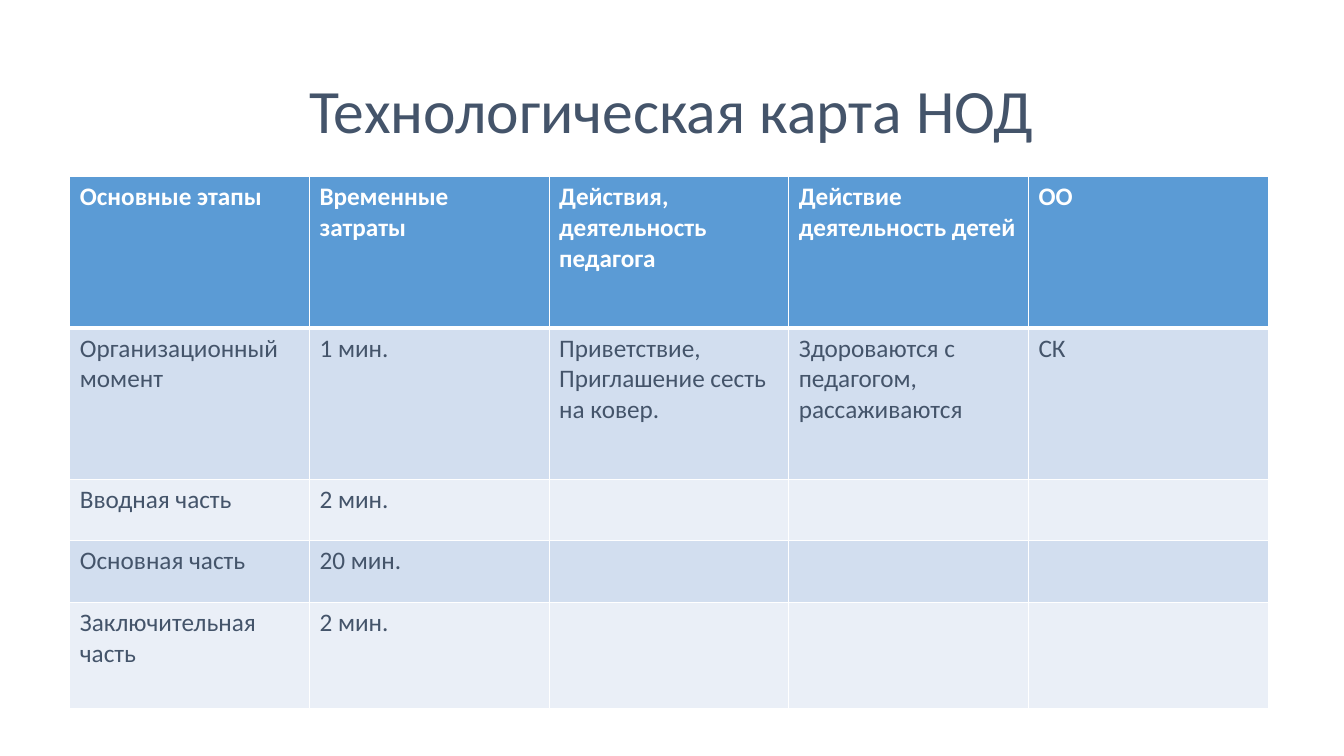
from lxml.etree import SubElement
from pptx import Presentation
from pptx.dml.color import RGBColor
from pptx.enum.text import MSO_ANCHOR as Anchor, PP_ALIGN as Align
from pptx.oxml.ns import qn
from pptx.util import Pt

# Content
TITLE = "Технологическая карта НОД"
ROWS = [
    ["Основные этапы", "Временные затраты", "Действия, деятельность педагога",
     "Действие деятельность детей", "ОО"],
    ["Организационный момент", "1 мин.", "Приветствие,\nПриглашение сесть на ковер.",
     "Здороваются с педагогом, рассаживаются", "СК"],
    ["Вводная часть", "2 мин.", "", "", ""],
    ["Основная часть", "20 мин.", "", "", ""],
    ["Заключительная часть", "2 мин.", "", "", ""],
]

# Colours and text formats
WHITE = RGBColor(0xFF, 0xFF, 0xFF)
SLATE = RGBColor(0x44, 0x54, 0x6A)
HEADER_BLUE = RGBColor(0x5B, 0x9B, 0xD5)
BANDS = [RGBColor(0xEA, 0xEF, 0xF7), RGBColor(0xD2, 0xDE, 0xEF)]
TITLE_FONT = {"name": "Calibri", "size": Pt(44), "bold": False}
HEADER_FONT = {"name": "Calibri", "size": Pt(18), "bold": True}
BODY_FONT = {"name": "Calibri", "size": Pt(18), "bold": False}

# Layout in points
SLIDE_SIZE = (960, 540)
TITLE_BOX = {"left": 66, "top": 28.75, "width": 828, "height": 104.4}
TABLE_LEFT, TABLE_TOP, COLUMN_WIDTH = 49.9, 126.3, 171.2
ROW_HEIGHTS = [108, 108, 44, 44, 75.8]


def format_font(font, values, colour):
    for name, value in values.items():
        setattr(font, name, value)
    font.color.rgb = colour


def add_borders(cell, widths):
    properties = cell._tc.get_or_add_tcPr()
    for position, (side, width) in enumerate(widths.items()):
        line = properties.makeelement(qn(f"a:{side}"), {"w": str(Pt(width))})
        fill = SubElement(line, qn("a:solidFill"))
        SubElement(fill, qn("a:srgbClr"), val=str(WHITE))
        properties.insert(position, line)


presentation = Presentation()
presentation.slide_width, presentation.slide_height = map(Pt, SLIDE_SIZE)
slide = presentation.slides.add_slide(presentation.slide_layouts[5])

# Title
title = slide.shapes.title
for name, value in TITLE_BOX.items():
    setattr(title, name, Pt(value))
title.text_frame.text = TITLE
title.text_frame.vertical_anchor = Anchor.MIDDLE
paragraph = title.text_frame.paragraphs[0]
paragraph.alignment = Align.CENTER
paragraph.line_spacing = 0.9
format_font(paragraph.runs[0].font, TITLE_FONT, SLATE)

# Table of lesson stages
table = slide.shapes.add_table(
    len(ROWS), len(ROWS[0]), Pt(TABLE_LEFT), Pt(TABLE_TOP),
    Pt(COLUMN_WIDTH * len(ROWS[0])), Pt(sum(ROW_HEIGHTS))).table
for column in table.columns:
    column.width = Pt(COLUMN_WIDTH)

for row_number, (texts, height) in enumerate(zip(ROWS, ROW_HEIGHTS)):
    table.rows[row_number].height = Pt(height)
    is_header = row_number == 0
    font_values, colour = (HEADER_FONT, WHITE) if is_header else (BODY_FONT, SLATE)
    borders = {"lnL": 1, "lnR": 1, "lnT": 3 if row_number == 1 else 1,
               "lnB": 3 if is_header else 1}
    for column_number, text in enumerate(texts):
        cell = table.cell(row_number, column_number)
        cell.text = text
        cell.fill.solid()
        cell.fill.fore_color.rgb = HEADER_BLUE if is_header else BANDS[row_number % 2]
        add_borders(cell, borders)
        for paragraph in cell.text_frame.paragraphs:
            for run in paragraph.runs:
                format_font(run.font, font_values, colour)

presentation.save("out.pptx")
